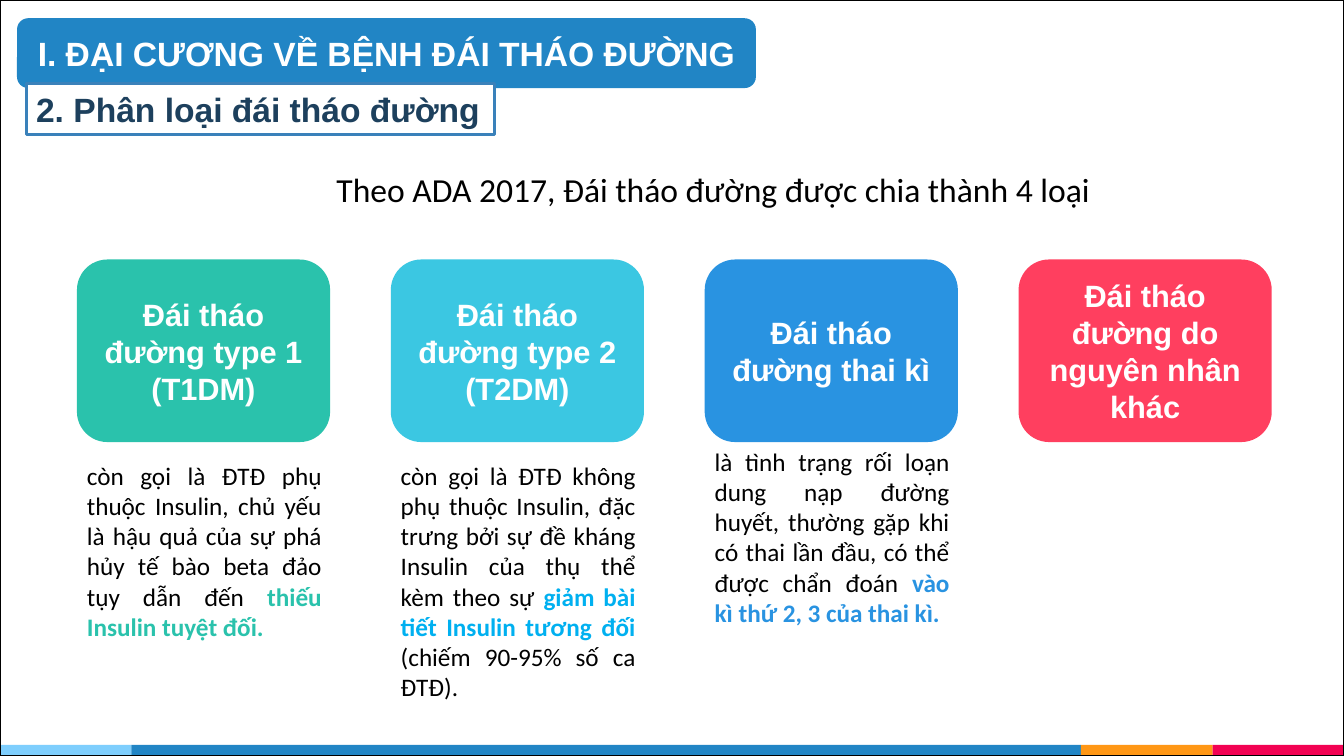
import pptx
import pptx.util
import pptx.dml.color
import pptx.enum.shapes
import pptx.enum.text
from dataclasses import dataclass

Cm = pptx.util.Cm
Shape = pptx.enum.shapes.MSO_SHAPE
Align = pptx.enum.text.PP_ALIGN
Anchor = pptx.enum.text.MSO_ANCHOR


@dataclass(frozen=True)
class Theme:
    heading_font: str = "Arial"
    body_font: str = "Calibri"
    heading_size: int = 24
    card_size: int = 22
    body_size: int = 18
    white: str = "FFFFFF"
    black: str = "000000"
    navy: str = "1D405D"
    outline: str = "3A81BA"
    banner: str = "2185C5"
    sky: str = "7ECEFD"
    orange: str = "FF9715"
    pink: str = "F20253"
    teal: str = "2AC2AC"
    cyan: str = "3BC7E2"
    bright_cyan: str = "00B0F0"
    blue: str = "2993E1"
    red: str = "FF3F5F"


theme = Theme()
rgb = pptx.dml.color.RGBColor.from_string

deck = pptx.Presentation()
deck.slide_width = Cm(33.87)
deck.slide_height = Cm(19.05)
page = deck.slides.add_slide(deck.slide_layouts[6])


def add_block(kind, left, top, width, height, fill=None, line=None, line_width=2):
    block = page.shapes.add_shape(kind, Cm(left), Cm(top), Cm(width), Cm(height))
    block.shadow.inherit = False
    if fill:
        block.fill.solid()
        block.fill.fore_color.rgb = rgb(fill)
    else:
        block.fill.background()
    if line:
        block.line.color.rgb = rgb(line)
        block.line.width = pptx.util.Pt(line_width)
    else:
        block.line.fill.background()
    return block


def write_text(box, text, font, size, color, bold=False, align=Align.LEFT, anchor=Anchor.TOP, indent=0):
    frame = box.text_frame
    frame.word_wrap = True
    frame.vertical_anchor = anchor
    frame.margin_left = Cm(indent)
    frame.margin_right = frame.margin_top = frame.margin_bottom = 0
    para = frame.paragraphs[0]
    para.text = text
    para.alignment = align
    para.font.name = font
    para.font.size = pptx.util.Pt(size)
    para.font.bold = bold
    para.font.color.rgb = rgb(color)
    return para


stripe_edges = [0, 3.31, 27.24, 30.56, 33.87]
stripe_colors = [theme.sky, theme.banner, theme.orange, theme.pink]
for left, right, color in zip(stripe_edges, stripe_edges[1:], stripe_colors):
    add_block(Shape.RECTANGLE, left, 18.77, right - left, 0.28, color)

banner = add_block(Shape.ROUNDED_RECTANGLE, 0.43, 0.46, 18.62, 1.76, theme.banner)
banner.adjustments[0] = 0.16
write_text(banner, "I. ĐẠI CƯƠNG VỀ BỆNH ĐÁI THÁO ĐƯỜNG", theme.heading_font,
           theme.heading_size, theme.white, True, Align.CENTER, Anchor.MIDDLE)

subtitle = add_block(Shape.RECTANGLE, 0.66, 2.11, 11.8, 1.29, theme.white, theme.outline)
write_text(subtitle, "2. Phân loại đái tháo đường", theme.heading_font,
           theme.heading_size, theme.navy, True, anchor=Anchor.MIDDLE, indent=0.25)

intro = page.shapes.add_textbox(Cm(8.48), Cm(4.25), Cm(19.05), Cm(1.1))
write_text(intro, "Theo ADA 2017, Đái tháo đường được chia thành 4 loại", theme.body_font,
           theme.heading_size, theme.black)

cards = [
    (theme.teal, "Đái tháo\vđường type 1\v(T1DM)", 11.59, [
        ("còn gọi là ĐTĐ phụ\vthuộc Insulin, chủ yếu\vlà hậu quả của sự phá\v"
         "hủy tế bào beta đảo\vtụy dẫn đến ", None),
        ("thiếu\vInsulin tuyệt đối.", theme.teal),
    ]),
    (theme.cyan, "Đái tháo\vđường type 2\v(T2DM)", 11.59, [
        ("còn gọi là ĐTĐ không\vphụ thuộc Insulin, đặc\vtrưng bởi sự đề kháng\v"
         "Insulin của thụ thể\vkèm theo sự ", None),
        ("giảm bài\vtiết Insulin tương đối\v", theme.bright_cyan),
        ("(chiếm 90-95% số ca\vĐTĐ).", None),
    ]),
    (theme.blue, "Đái tháo\vđường thai kì", 11.24, [
        ("là tình trạng rối loạn\vdung nạp đường\vhuyết, thường gặp khi\v"
         "có thai lần đầu, có thể\vđược chẩn đoán ", None),
        ("vào\vkì thứ 2, 3 của thai kì.", theme.blue),
    ]),
    (theme.red, "Đái tháo\vđường do\vnguyên nhân\vkhác", None, []),
]
for index, (color, name, body_top, pieces) in enumerate(cards):
    left = 1.94 + 7.91 * index
    card = add_block(Shape.ROUNDED_RECTANGLE, left, 6.54, 6.38, 4.6, color)
    write_text(card, name, theme.heading_font, theme.card_size, theme.white,
               True, Align.CENTER, Anchor.MIDDLE)
    if not pieces:
        continue
    box = page.shapes.add_textbox(Cm(left + 0.25), Cm(body_top), Cm(5.92), Cm(6.2))
    para = write_text(box, "", theme.body_font, theme.body_size, theme.black, align=Align.JUSTIFY)
    for piece, accent in pieces:
        for number, line in enumerate(piece.split("\v")):
            if number:
                para.add_line_break()
            if line:
                span = para.add_run()
                span.text = line
                if accent:
                    span.font.bold = True
                    span.font.color.rgb = rgb(accent)

add_block(Shape.RECTANGLE, 0, 0, 33.87, 19.05, line=theme.black)

deck.save("out.pptx")
